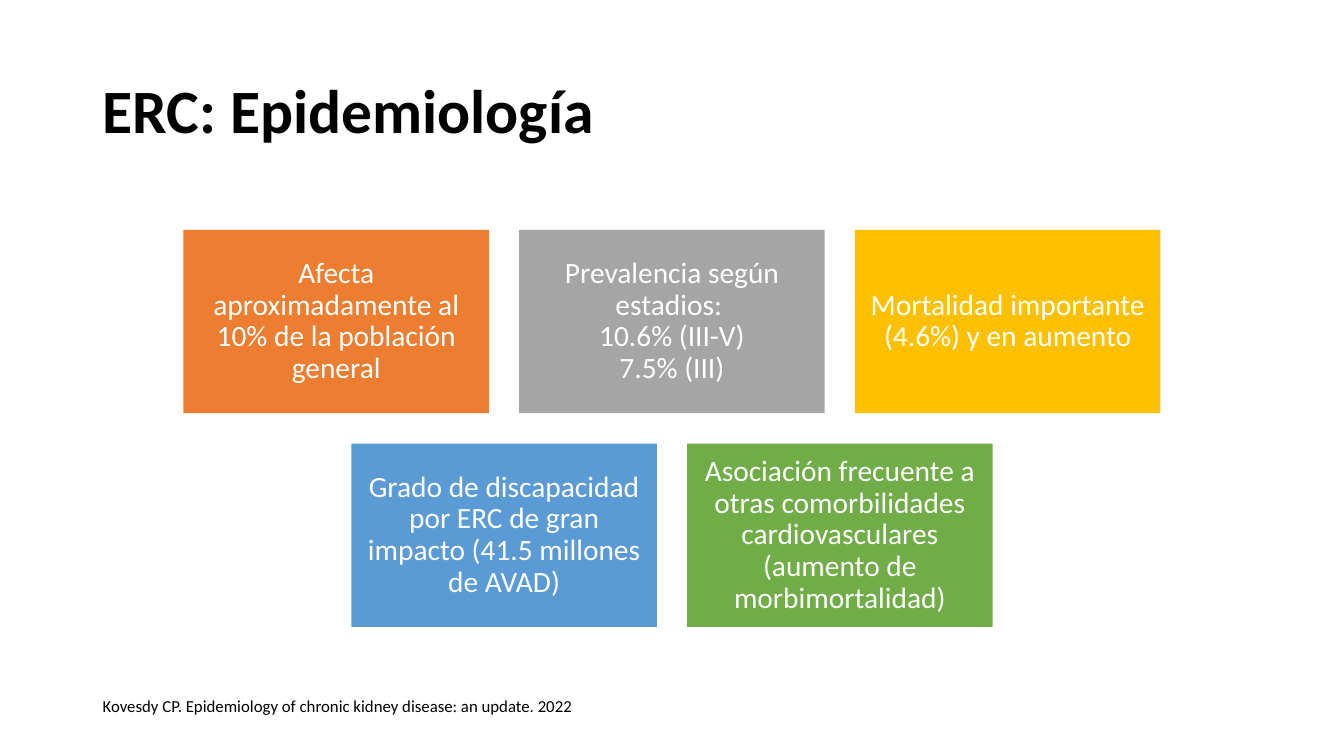
from dataclasses import dataclass, field

import pptx
import pptx.dml.color
import pptx.enum.shapes
import pptx.enum.text
import pptx.util

Inches = pptx.util.Inches
Align = pptx.enum.text.PP_ALIGN


@dataclass(frozen=True)
class Theme:
    font: str = "Calibri"
    black: str = "000000"
    white: str = "FFFFFF"
    orange: str = "ED7D31"
    gray: str = "A5A5A5"
    gold: str = "FFC000"
    blue: str = "5B9BD5"
    green: str = "70AD47"
    title: int = 44
    body: int = 21
    note: int = 12


@dataclass(frozen=True)
class Grid:
    """Card grid in inches; each row is centred on the slide."""
    wide: float = 13.33
    high: float = 7.5
    top: float = 2.28
    col: float = 3.03
    row: float = 1.82
    gap: float = 0.3

    def place(self, line: int, index: int, count: int) -> tuple[float, float]:
        span = count * self.col + (count - 1) * self.gap
        left = (self.wide - span) / 2 + index * (self.col + self.gap)
        return left, self.top + line * (self.row + self.gap)


@dataclass(frozen=True)
class Card:
    text: str
    fill: str


@dataclass(frozen=True)
class Label:
    """A text line; top and height are shares of the slide height."""
    text: str
    top: float
    height: float
    size: int
    bold: bool = False
    format: dict = field(default_factory=dict)


THEME = Theme()
GRID = Grid()
SIDE = 0.069  # share of the slide width left free at each side

LABELS = [
    Label("ERC: Epidemiología", 0.053, 0.193, THEME.title, True, {"line_spacing": 0.9}),
    Label("Kovesdy CP. Epidemiology of chronic kidney disease: an update. 2022",
          0.903, 0.06, THEME.note),
]
ROWS = [
    [
        Card("Afecta aproximadamente al 10% de la población general", THEME.orange),
        Card("Prevalencia según estadios: \n10.6% (III-V)\n7.5% (III)", THEME.gray),
        Card("Mortalidad importante (4.6%) y en aumento", THEME.gold),
    ],
    [
        Card("Grado de discapacidad por ERC de gran impacto (41.5 millones de AVAD)",
             THEME.blue),
        Card("Asociación frecuente a otras comorbilidades cardiovasculares "
             "(aumento de morbimortalidad)", THEME.green),
    ],
]
MIDDLE = {"word_wrap": True, "vertical_anchor": pptx.enum.text.MSO_ANCHOR.MIDDLE}
INSET = {f"margin_{side}": Inches(0.09) for side in ("left", "right", "top", "bottom")}
CENTRE = {"alignment": Align.CENTER, "line_spacing": 0.9,
          "space_after": pptx.util.Pt(7.35)}


def apply(target: object, values: dict) -> None:
    for name, value in values.items():
        setattr(target, name, value)


def write(frame, text: str, size: int, color: str, bold: bool, format: dict) -> None:
    apply(frame, MIDDLE)
    para = frame.paragraphs[0]
    para.text = text
    apply(para, format)
    for run in para.runs:
        apply(run.font, {"name": THEME.font, "size": pptx.util.Pt(size), "bold": bold})
        run.font.color.rgb = pptx.dml.color.RGBColor.from_string(color)


def add_label(slide, label: Label) -> None:
    box = slide.shapes.add_textbox(
        Inches(SIDE * GRID.wide), Inches(label.top * GRID.high),
        Inches((1 - 2 * SIDE) * GRID.wide), Inches(label.height * GRID.high))
    write(box.text_frame, label.text, label.size, THEME.black, label.bold, label.format)


def add_card(slide, card: Card, left: float, top: float) -> None:
    box = slide.shapes.add_shape(
        pptx.enum.shapes.MSO_SHAPE.RECTANGLE,
        Inches(left), Inches(top), Inches(GRID.col), Inches(GRID.row))
    box.shadow.inherit = False
    box.fill.solid()
    box.fill.fore_color.rgb = pptx.dml.color.RGBColor.from_string(card.fill)
    box.line.fill.background()
    apply(box.text_frame, INSET)
    write(box.text_frame, card.text, THEME.body, THEME.white, False, CENTRE)


def main() -> None:
    deck = pptx.Presentation()
    apply(deck, {"slide_width": Inches(GRID.wide), "slide_height": Inches(GRID.high)})
    slide = deck.slides.add_slide(deck.slide_layouts[6])
    for label in LABELS:
        add_label(slide, label)
    for line, cards in enumerate(ROWS):
        for index, card in enumerate(cards):
            add_card(slide, card, *GRID.place(line, index, len(cards)))
    deck.save("out.pptx")


if __name__ == "__main__":
    main()
